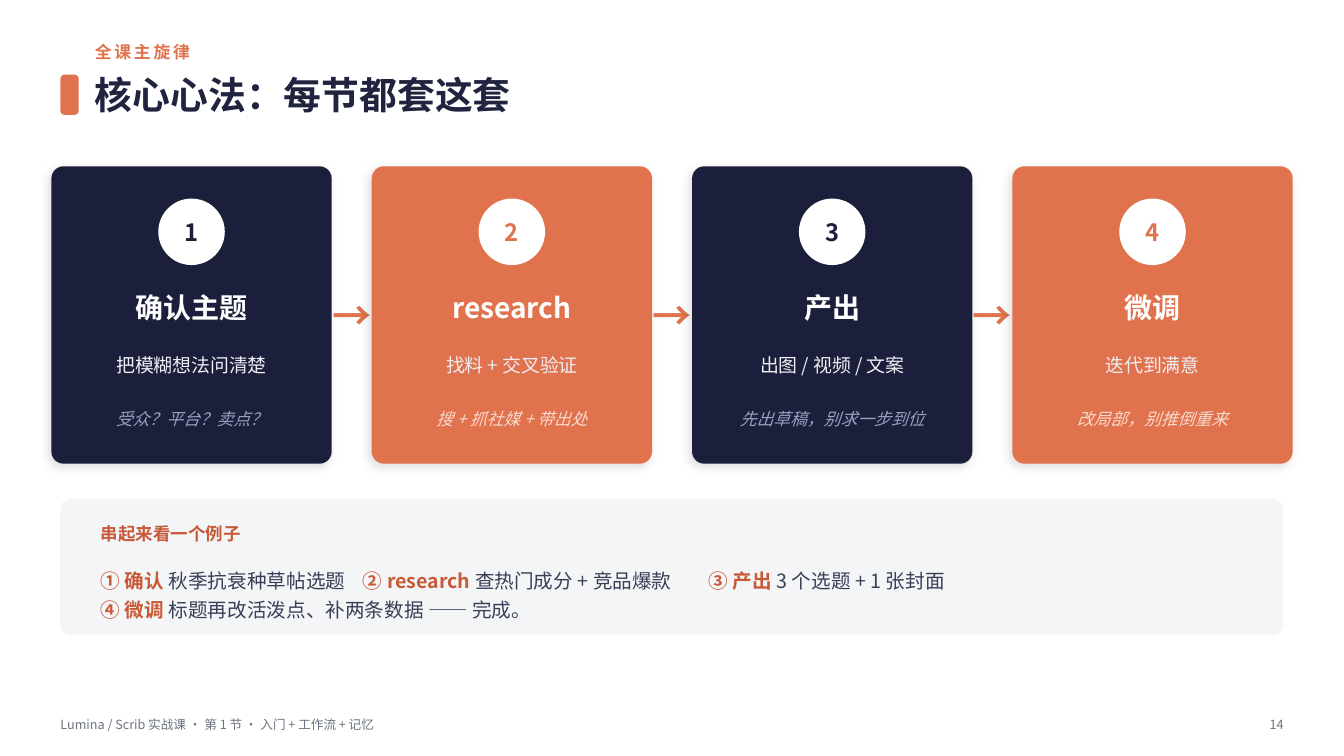
"""Build the four-step method slide on a grid of 0.1 inch cells."""
from lxml import etree
from pptx import Presentation
from pptx import util as u
from pptx.dml.color import RGBColor
from pptx.enum import shapes, text
from pptx.oxml.ns import qn

FONT = "Noto Sans CJK SC"
COLORS = {
    "navy": "1B1F3B", "orange": "E0734D", "rust": "C85A38", "title": "20243F",
    "white": "FFFFFF", "pale": "EEEEF4", "lilac": "9AA0C0", "peach": "FAD9CC",
    "panel": "F4F5F7", "body": "3A3E57", "footer": "6B7280", "black": "000000",
}
STEPS = [
    ("确认主题", "把模糊想法问清楚", "受众？平台？卖点？"),
    ("research", "找料 + 交叉验证", "搜 + 抓社媒 + 带出处"),
    ("产出", "出图 / 视频 / 文案", "先出草稿，别求一步到位"),
    ("微调", "迭代到满意", "改局部，别推倒重来"),
]
THEMES = [("navy", "lilac"), ("orange", "peach")]
EXAMPLE = [
    [("① 确认", " 秋季抗衰种草帖选题\t"), ("② research", " 查热门成分 + 竞品爆款\t"),
     ("③ 产出", " 3 个选题 + 1 张封面")],
    [("④ 微调", " 标题再改活泼点、补两条数据 —— 完成。")],
]
EXAMPLE_TABS = (26, 60.3)
LEFT, INDENT, FULL_WIDTH = 6, 9.4, 121.3
CARD_LEFT, CARD_TOP, CARD_WIDTH, CARD_HEIGHT, CARD_PITCH = 5.1, 16.5, 27.8, 29.5, 31.77
LEFT_ALIGN, CENTER, RIGHT = text.PP_ALIGN.LEFT, text.PP_ALIGN.CENTER, text.PP_ALIGN.RIGHT


def cells(count):
    """Convert grid cells to a length."""
    return u.Inches(count / 10)


def box(*area):
    """Convert left, top, width and height from cells to lengths."""
    return [cells(value) for value in area]


def color(name):
    """Look up a colour by name."""
    return RGBColor.from_string(COLORS[name])


def add_run(paragraph, content, size, tint, bold=False, italic=False, spacing=0):
    """Append one formatted run to a paragraph."""
    run = paragraph.add_run()
    run.text = content
    font = run.font
    font.name, font.size, font.bold, font.italic = FONT, u.Pt(size), bold, italic
    font.color.rgb = color(tint)
    properties = run._r.get_or_add_rPr()
    etree.SubElement(properties, qn("a:ea"), typeface=FONT)
    if spacing:
        properties.set("spc", str(spacing * 100))


def prepare_frame(shape):
    """Give a shape wrapped, vertically centred text without insets."""
    frame = shape.text_frame
    frame.word_wrap = True
    frame.vertical_anchor = text.MSO_ANCHOR.MIDDLE
    frame.margin_left = frame.margin_top = frame.margin_right = frame.margin_bottom = 0
    return frame


def add_label(slide, area, content, size, tint, align=LEFT_ALIGN, line_spacing=None, **style):
    """Add a text box with a single run."""
    paragraph = prepare_frame(slide.shapes.add_textbox(*box(*area))).paragraphs[0]
    paragraph.alignment = align
    if line_spacing:
        paragraph.line_spacing = line_spacing
    add_run(paragraph, content, size, tint, **style)


def add_block(slide, kind, area, fill):
    """Add a filled shape without outline or shadow."""
    shape = slide.shapes.add_shape(kind, *box(*area))
    shape.shadow.inherit = False
    shape.fill.solid()
    shape.fill.fore_color.rgb = color(fill)
    shape.line.fill.background()
    return shape


def add_rounded(slide, area, fill, radius):
    """Add a rounded rectangle whose corner radius is in cells."""
    shape = add_block(slide, shapes.MSO_SHAPE.ROUNDED_RECTANGLE, area, fill)
    shape.adjustments[0] = radius / min(area[2:])
    return shape


def add_soft_shadow(shape):
    """Put a faint outer shadow on a shape."""
    effects = shape._element.spPr.find(qn("a:effectLst"))
    shadow = etree.SubElement(effects, qn("a:outerShdw"), blurRad=str(u.Pt(7)),
                              dist=str(u.Pt(3)), dir=str(135 * 60000), rotWithShape="0")
    tint = etree.SubElement(shadow, qn("a:srgbClr"), val=COLORS["black"])
    etree.SubElement(tint, qn("a:alpha"), val="12000")


def add_step(slide, index, step):
    """Add one step card with its badge and three lines."""
    title, summary, hint = step
    fill, hint_tint = THEMES[index % 2]
    left = CARD_LEFT + index * CARD_PITCH

    def centered(top, width, height):
        """Centre an area within the card."""
        return left + (CARD_WIDTH - width) / 2, top, width, height

    add_soft_shadow(add_rounded(slide, (left, CARD_TOP, CARD_WIDTH, CARD_HEIGHT), fill, 1.2))
    badge = add_block(slide, shapes.MSO_SHAPE.OVAL, centered(19.7, 6.6, 6.6), "white")
    paragraph = prepare_frame(badge).paragraphs[0]
    paragraph.alignment = CENTER
    add_run(paragraph, str(index + 1), 17, fill, bold=True)
    add_label(slide, centered(28, 25.8, 5), title, 20, "white", CENTER, bold=True)
    add_label(slide, centered(33.7, 24.8, 5), summary, 13.5, "pale", CENTER)
    add_label(slide, centered(38.5, 24.8, 6), hint, 12, hint_tint, CENTER, 1.05, italic=True)
    if index < len(STEPS) - 1:
        arrow_area = (left + CARD_WIDTH - 0.2, CARD_TOP, 4.4, CARD_HEIGHT)
        add_label(slide, arrow_area, "→", 28, "orange", CENTER, bold=True)


def add_example(slide):
    """Add the example panel with its tabbed lines."""
    add_rounded(slide, (LEFT, 49.5, FULL_WIDTH, 13.5), "panel", 1)
    add_label(slide, (10, 51.2, 110, 3.5), "串起来看一个例子", 12.5, "rust", bold=True)
    frame = prepare_frame(slide.shapes.add_textbox(*box(10, 55, 113.3, 7.5)))
    for number, line in enumerate(EXAMPLE):
        paragraph = frame.add_paragraph() if number else frame.paragraphs[0]
        paragraph.line_spacing = 1.25
        tabs = etree.SubElement(paragraph._p.get_or_add_pPr(), qn("a:tabLst"))
        for position in EXAMPLE_TABS:
            etree.SubElement(tabs, qn("a:tab"), pos=str(cells(position)), algn="l")
        for name, detail in line:
            add_run(paragraph, name, 14, "rust", bold=True)
            add_run(paragraph, detail, 14, "body")


def main():
    """Build and save the slide."""
    presentation = Presentation()
    presentation.slide_width, presentation.slide_height = u.Inches(13.33), u.Inches(7.5)
    slide = presentation.slides.add_slide(presentation.slide_layouts[6])
    add_label(slide, (INDENT, 3.6, 117.9, 3), "全课主旋律", 12, "orange", bold=True, spacing=2)
    add_rounded(slide, (LEFT, 7.4, 1.8, 4), "orange", 0.4)
    add_label(slide, (INDENT, 6.4, 117.9, 6), "核心心法：每节都套这套", 27, "title", bold=True)
    for index, step in enumerate(STEPS):
        add_step(slide, index, step)
    add_example(slide)
    add_label(slide, (LEFT, 70.4, 90, 3), "Lumina / Scrib 实战课 · 第 1 节 · 入门 + 工作流 + 记忆",
              9, "footer")
    add_label(slide, (120.3, 70.4, 7, 3), "14", 9, "footer", RIGHT)
    presentation.save("out.pptx")


if __name__ == "__main__":
    main()
